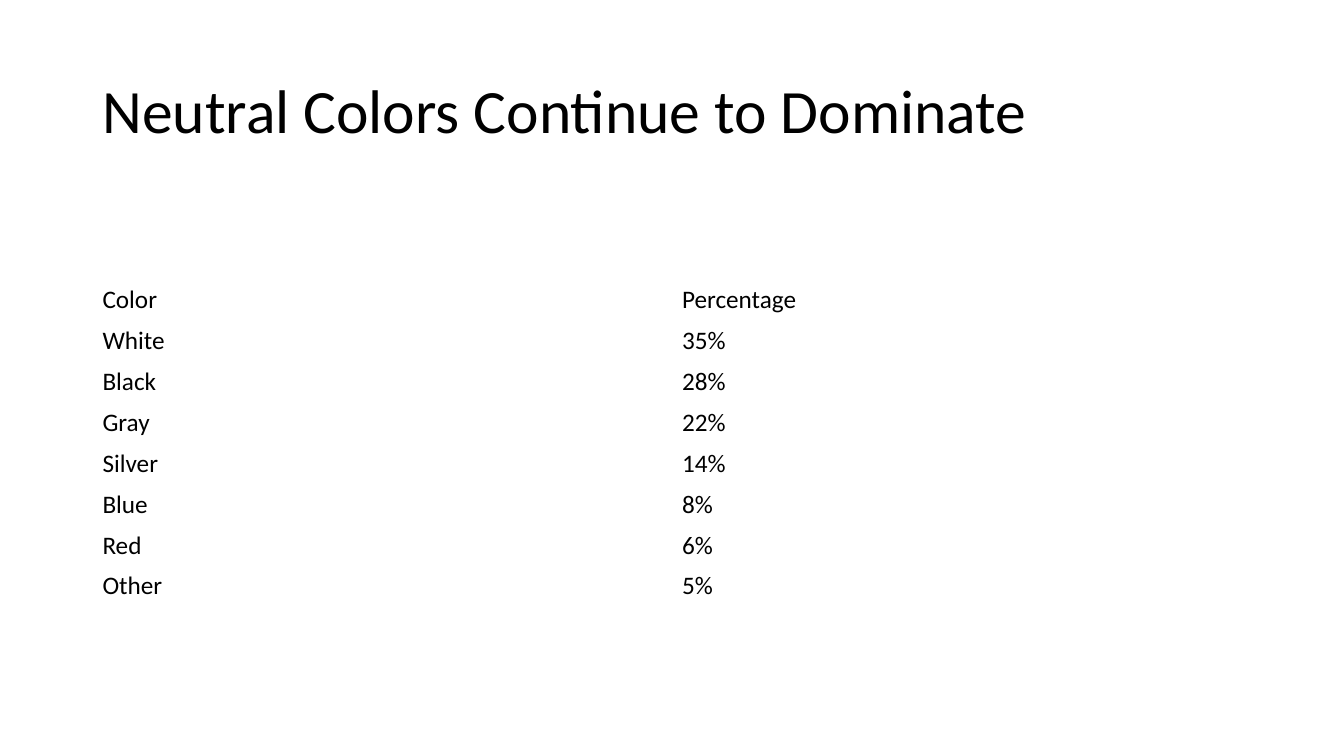
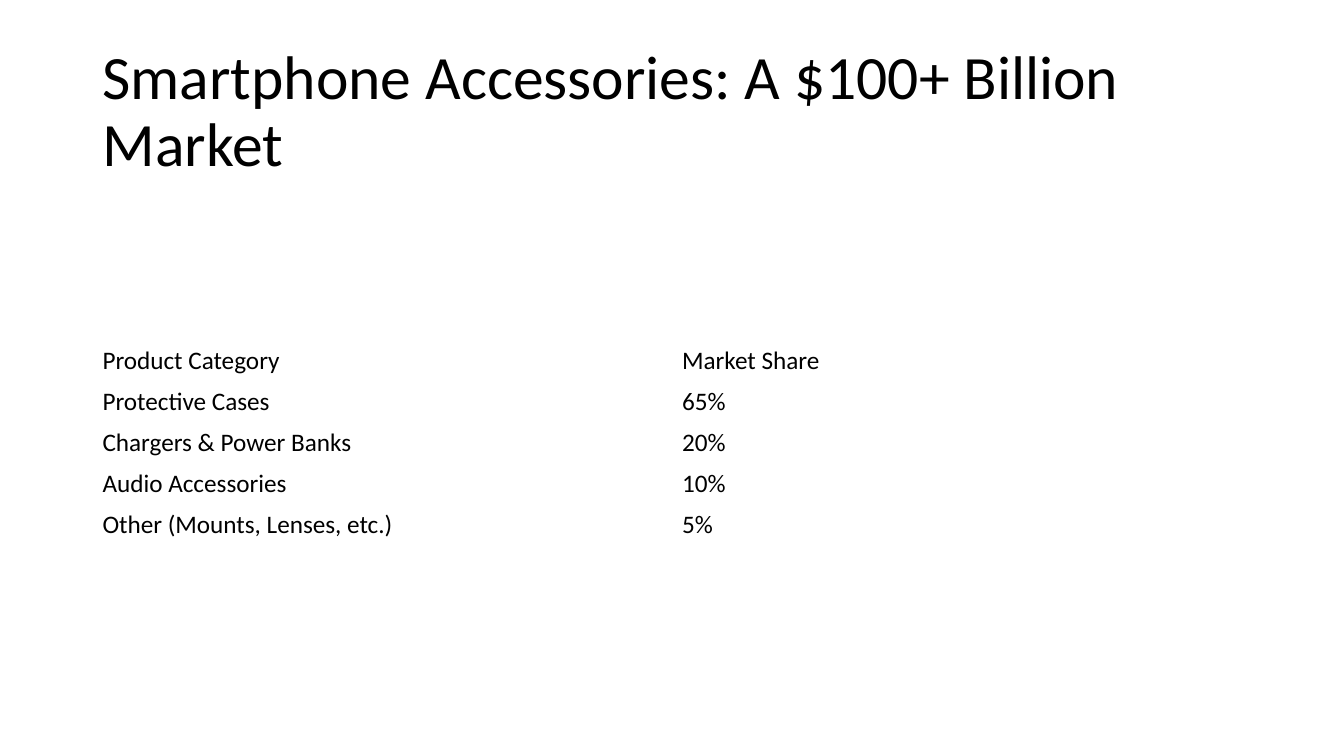
"""Build two slides, each with a title and a plain two-column table."""
from pptx import Presentation
from pptx.dml.color import RGBColor
from pptx.enum.text import MSO_ANCHOR, MSO_AUTO_SIZE, PP_ALIGN
from pptx.util import Cm, Pt

MIDDLE = MSO_ANCHOR.MIDDLE
NO_AUTOFIT = MSO_AUTO_SIZE.NONE
LEFT_ALIGN = PP_ALIGN.LEFT

FONT = "Calibri"
TEXT_COLOR = "000000"
LEFT, WIDTH = 2.33, 29.21
TITLE_TOP, TITLE_HEIGHT = 1.01, 3.68
TABLE_MIDDLE, ROW_HEIGHT = 11.13, 1.02

SLIDES = [
    ("Neutral Colors Continue to Dominate", [
        ("Color", "Percentage"),
        ("White", "35%"),
        ("Black", "28%"),
        ("Gray", "22%"),
        ("Silver", "14%"),
        ("Blue", "8%"),
        ("Red", "6%"),
        ("Other", "5%"),
    ]),
    ("Smartphone Accessories: A $100+ Billion Market", [
        ("Product Category", "Market Share"),
        ("Protective Cases", "65%"),
        ("Chargers & Power Banks", "20%"),
        ("Audio Accessories", "10%"),
        ("Other (Mounts, Lenses, etc.)", "5%"),
    ]),
]


def rgb(color):
    return RGBColor.from_string(color)


def style(paragraph, size):
    paragraph.alignment = LEFT_ALIGN
    paragraph.font.name = FONT
    paragraph.font.size = Pt(size)
    paragraph.font.color.rgb = rgb(TEXT_COLOR)


def set_title(slide, heading):
    title = slide.shapes.title
    title.left, title.top = Cm(LEFT), Cm(TITLE_TOP)
    title.width, title.height = Cm(WIDTH), Cm(TITLE_HEIGHT)
    frame = title.text_frame
    frame.text = heading
    frame.word_wrap = True
    frame.auto_size = NO_AUTOFIT
    frame.vertical_anchor = MIDDLE
    frame.paragraphs[0].line_spacing = 0.9
    style(frame.paragraphs[0], 44)


def add_shares(slide, shares):
    height = len(shares) * ROW_HEIGHT
    table = slide.shapes.add_table(
        len(shares), len(shares[0]), Cm(LEFT), Cm(TABLE_MIDDLE - height / 2),
        Cm(WIDTH), Cm(height)).table
    table.first_row = False
    table.horz_banding = False
    for row, texts in zip(table.rows, shares):
        for cell, text in zip(row.cells, texts):
            cell.text = text
            cell.fill.background()
            cell.vertical_anchor = MIDDLE
            style(cell.text_frame.paragraphs[0], 18)


def main():
    deck = Presentation()
    deck.slide_width, deck.slide_height = Cm(33.87), Cm(19.05)
    title_only = deck.slide_layouts.get_by_name("Title Only")
    for heading, shares in SLIDES:
        slide = deck.slides.add_slide(title_only)
        set_title(slide, heading)
        add_shares(slide, shares)
    deck.save("out.pptx")


if __name__ == "__main__":
    main()
